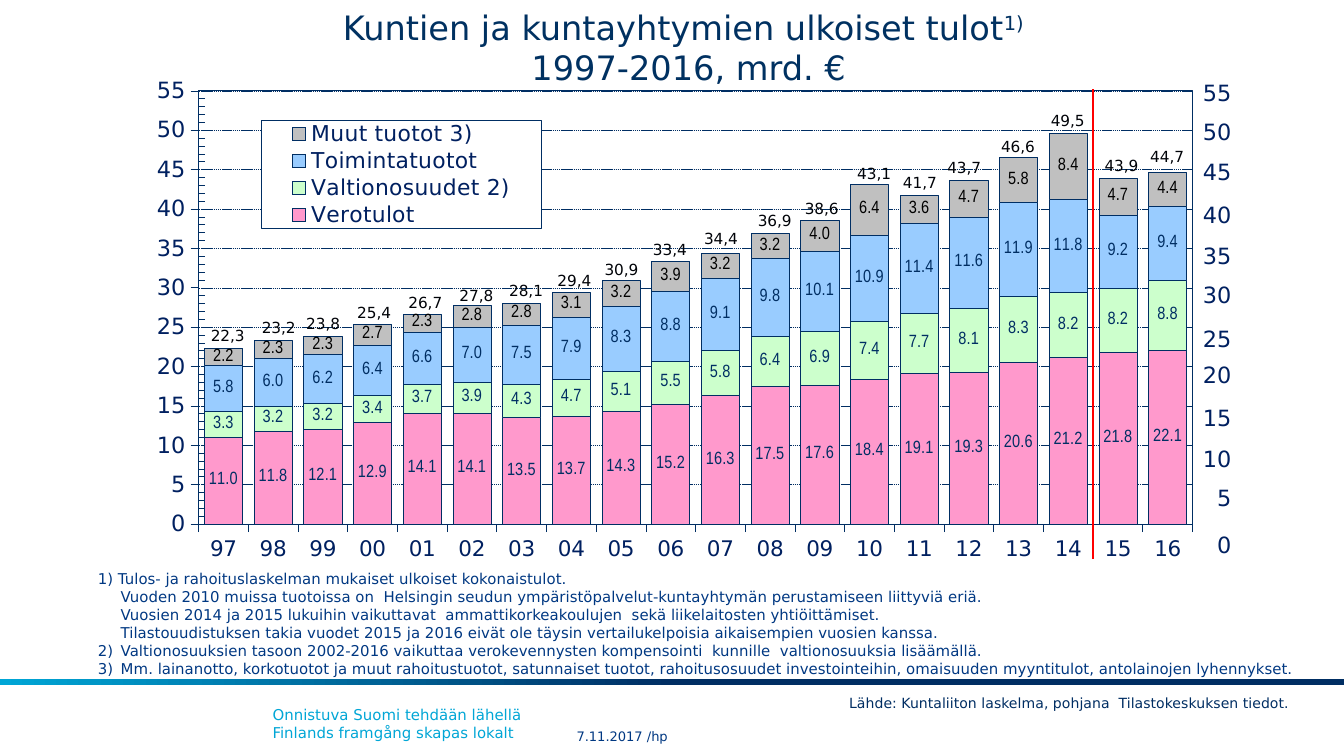
from lxml.etree import SubElement
from pptx import Presentation
from pptx.chart.data import CategoryChartData
from pptx.dml.color import RGBColor
from pptx.enum.chart import XL_CHART_TYPE, XL_LEGEND_POSITION, XL_TICK_MARK
from pptx.enum.dml import MSO_LINE
from pptx.enum.shapes import MSO_CONNECTOR, MSO_SHAPE
from pptx.enum.text import MSO_ANCHOR, PP_ALIGN
from pptx.oxml import parse_xml
from pptx.oxml.ns import nsdecls, qn
from pptx.util import Inches, Pt

SANS = "DejaVu Sans"
NAVY = "002E63"
AXIS = "002060"
NOTE = "003882"
CYAN = "00A6D6"

YEARS = ["97", "98", "99", "00", "01", "02", "03", "04", "05", "06",
         "07", "08", "09", "10", "11", "12", "13", "14", "15", "16"]
REVENUES = [
    ("Verotulot", "FF99CC", NAVY,
     [11, 11.8, 12.1, 12.9, 14.1, 14.1, 13.5, 13.7, 14.3, 15.2,
      16.3, 17.5, 17.6, 18.4, 19.1, 19.3, 20.6, 21.2, 21.8, 22.1]),
    ("Valtionosuudet 2)", "CCFFCC", NAVY,
     [3.3, 3.2, 3.2, 3.4, 3.7, 3.9, 4.3, 4.7, 5.1, 5.5,
      5.8, 6.4, 6.9, 7.4, 7.7, 8.1, 8.3, 8.2, 8.2, 8.8]),
    ("Toimintatuotot", "99CCFF", NAVY,
     [5.8, 6, 6.2, 6.4, 6.6, 7, 7.5, 7.9, 8.3, 8.8,
      9.1, 9.8, 10.1, 10.9, 11.4, 11.6, 11.9, 11.8, 9.2, 9.4]),
    ("Muut tuotot 3)", "C0C0C0", "000000",
     [2.2, 2.3, 2.3, 2.7, 2.3, 2.8, 2.8, 3.1, 3.2, 3.9,
      3.2, 3.2, 4, 6.4, 3.6, 4.7, 5.8, 8.4, 4.7, 4.4]),
]
TOTALS = [
    ("22,3", 0.49, 1.83), ("23,2", 0.87, 1.77), ("23,8", 1.2, 1.74), ("25,4", 1.58, 1.66),
    ("26,7", 1.96, 1.58), ("27,8", 2.34, 1.53), ("28,1", 2.71, 1.49), ("29,4", 3.07, 1.42),
    ("30,9", 3.42, 1.34), ("33,4", 3.78, 1.19), ("34,4", 4.16, 1.11), ("36,9", 4.56, 0.97),
    ("38,6", 4.91, 0.88), ("43,1", 5.3, 0.62), ("41,7", 5.64, 0.69), ("43,7", 5.97, 0.58),
    ("46,6", 6.37, 0.42), ("49,5", 6.74, 0.23), ("43,9", 7.14, 0.56), ("44,7", 7.48, 0.5),
]
RIGHT_SCALE_TOPS = [3.35, 3, 2.71, 2.41, 2.09, 1.82, 1.49, 1.2, 0.9, 0.58, 0.28, -0.01]
FOOTNOTES = [
    ("1) Tulos- ja rahoituslaskelman mukaiset ulkoiset kokonaistulot.", True),
    ("Vuoden 2010 muissa tuotoissa on  Helsingin seudun ympäristöpalvelut-kuntayhtymän "
     "perustamiseen liittyviä eriä.", False),
    ("Vuosien 2014 ja 2015 lukuihin vaikuttavat  ammattikorkeakoulujen  sekä "
     "liikelaitosten yhtiöittämiset.", False),
    ("Tilastouudistuksen takia vuodet 2015 ja 2016 eivät ole täysin vertailukelpoisia "
     "aikaisempien vuosien kanssa.", False),
    ("2)\tValtionosuuksien tasoon 2002-2016 vaikuttaa verokevennysten kompensointi  kunnille  "
     "valtionosuuksia lisäämällä.", True),
    ("3)\tMm. lainanotto, korkotuotot ja muut rahoitustuotot, satunnaiset tuotot, "
     "rahoitusosuudet investointeihin, omaisuuden myyntitulot, antolainojen lyhennykset.", True),
]


def rgb(value):
    return RGBColor.from_string(value)


def style_font(font, size, color, name=SANS):
    font.size = Pt(size)
    font.name = name
    font.bold = False
    font.color.rgb = rgb(color)


def style_line(line, width):
    line.color.rgb = rgb(NAVY)
    line.width = Pt(width)


def add_frame(slide, left, top, width, height, wrap=True):
    frame = slide.shapes.add_textbox(
        Inches(left), Inches(top), Inches(width), Inches(height)).text_frame
    frame.word_wrap = wrap
    return frame


def add_label(slide, box, text, size, color, align=PP_ALIGN.LEFT, wrap=True):
    frame = add_frame(slide, *box, wrap=wrap)
    paragraph = frame.paragraphs[0]
    paragraph.text = text
    paragraph.alignment = align
    style_font(paragraph.font, size, color)
    return frame


def add_title(slide, left, top, width, height):
    frame = add_label(slide, (left, top, width, height),
                      "Kuntien ja kuntayhtymien ulkoiset tulot", 18, "003161", PP_ALIGN.CENTER)
    frame.vertical_anchor = MSO_ANCHOR.BOTTOM
    frame.margin_left = frame.margin_right = 0
    heading = frame.paragraphs[0]
    footnote_mark = heading.add_run()
    footnote_mark.text = "1)"
    footnote_mark._r.get_or_add_rPr().set("baseline", "30000")
    heading.add_line_break()
    heading.add_run().text = " 1997-2016, mrd. €"


def layout_xml(x, y, width, height, inner=False):
    target = '<c:layoutTarget val="inner"/>' if inner else ""
    return parse_xml(
        f'<c:layout {nsdecls("c")}><c:manualLayout>{target}'
        '<c:xMode val="edge"/><c:yMode val="edge"/>'
        f'<c:x val="{x}"/><c:y val="{y}"/><c:w val="{width}"/><c:h val="{height}"/>'
        '</c:manualLayout></c:layout>')


def outline_xml(fill):
    return parse_xml(
        f'<c:spPr {nsdecls("c", "a")}>{fill}<a:ln w="6350"><a:solidFill>'
        f'<a:srgbClr val="{NAVY}"/></a:solidFill></a:ln></c:spPr>')


def style_axes(chart):
    years, amounts = chart.category_axis, chart.value_axis
    for axis, size in ((years, 11.5), (amounts, 12)):
        style_font(axis.tick_labels.font, size, AXIS)
        style_line(axis.format.line, 0.3)
        axis.major_tick_mark = XL_TICK_MARK.OUTSIDE
    amounts.minimum_scale = 0
    amounts.maximum_scale = 55
    amounts.major_unit = 5
    amounts.minor_unit = 1
    amounts.minor_tick_mark = XL_TICK_MARK.INSIDE
    amounts.tick_labels.number_format = "0"
    amounts.tick_labels.number_format_is_linked = False
    grid = amounts.major_gridlines.format.line
    style_line(grid, 0.25)
    grid.dash_style = MSO_LINE.SQUARE_DOT


def style_legend(chart):
    chart.has_legend = True
    legend = chart.legend
    legend.position = XL_LEGEND_POSITION.RIGHT
    legend.include_in_layout = False
    style_font(legend.font, 11.7, AXIS)
    element = legend._element
    for old in element.findall(qn("c:layout")):
        element.remove(old)
    element.find(qn("c:legendPos")).addnext(layout_xml(0.12, 0.09, 0.26, 0.21))
    white = '<a:solidFill><a:srgbClr val="FFFFFF"/></a:solidFill>'
    element.find(qn("c:overlay")).addnext(outline_xml(white))


def add_revenue_chart(slide, left, top, width, height):
    data = CategoryChartData(number_format="0.0")
    data.categories = YEARS
    for name, _, _, values in REVENUES:
        data.add_series(name, values)
    chart = slide.shapes.add_chart(
        XL_CHART_TYPE.COLUMN_STACKED, Inches(left), Inches(top),
        Inches(width), Inches(height), data).chart
    chart.has_title = False
    style_font(chart.font, 12, NAVY)
    columns = chart.plots[0]
    columns.gap_width = 30
    columns.overlap = 100
    columns.vary_by_categories = False
    for series, (_, fill, label_color, _) in zip(columns.series, REVENUES):
        series.format.fill.solid()
        series.format.fill.fore_color.rgb = rgb(fill)
        style_line(series.format.line, 0.25)
        labels = series.data_labels
        labels.show_value = True
        labels.number_format = "0.0"
        labels.number_format_is_linked = False
        style_font(labels.font, 9.5, label_color, "Arial Narrow")
    style_axes(chart)
    style_legend(chart)
    plot_area = chart._chartSpace.chart.plotArea
    for old in plot_area.findall(qn("c:layout")):
        plot_area.remove(old)
    plot_area.insert(0, layout_xml(0.062, 0.033, 0.921, 0.842, inner=True))
    plot_area.append(outline_xml("<a:noFill/>"))

    for step, offset in enumerate(RIGHT_SCALE_TOPS):
        add_label(slide, (left + 7.86, top + offset, 0.42, 0.3), str(step * 5),
                  12, AXIS, PP_ALIGN.RIGHT, wrap=False)
    for total, x, y in TOTALS:
        add_label(slide, (left + x, top + y, 0.46, 0.24), total, 8.2, "000308", wrap=False)

    divider = slide.shapes.add_connector(
        MSO_CONNECTOR.STRAIGHT, Inches(left + 7.15), Inches(top + 3.61),
        Inches(left + 7.15), Inches(top + 0.11))
    divider.line.color.rgb = rgb("FF0000")
    divider.line.width = Pt(1)
    SubElement(divider._element.spPr, qn("a:effectLst"))


def add_footnotes(slide, left, top, width, height):
    frame = add_frame(slide, left, top, width, height)
    for index, (text, numbered) in enumerate(FOOTNOTES):
        note = frame.paragraphs[0] if index == 0 else frame.add_paragraph()
        note.text = text
        properties = note._p.get_or_add_pPr()
        properties.set("marL", str(Inches(0.21)))
        properties.set("indent", str(Inches(-0.17 if numbered else 0)))
        style_font(note.font, 8, NOTE)


def add_footer(slide, left, top, width):
    band = slide.shapes.add_shape(
        MSO_SHAPE.RECTANGLE, Inches(left), Inches(top), Inches(width), Inches(0.05))
    band.shadow.inherit = False
    band.line.fill.background()
    band.fill.gradient()
    band.fill.gradient_angle = 180
    for stop, position, color in zip(band.fill.gradient_stops, (0.5, 1), (NAVY, CYAN)):
        stop.position = position
        stop.color.rgb = rgb(color)
    add_label(slide, (left + 1.93, top + 0.15, 6.54, 0.37),
              "Onnistuva Suomi tehdään lähellä\vFinlands framgång skapas lokalt", 8, CYAN)
    date = add_label(slide, (left + 4.29, top + 0.35, 1.11, 0.16), "7.11.2017 /hp", 7, NOTE)
    date.vertical_anchor = MSO_ANCHOR.MIDDLE
    date.margin_left = date.margin_right = date.margin_top = date.margin_bottom = 0
    add_label(slide, (left + 6.22, top + 0.07, 3.5, 0.23),
              "Lähde: Kuntaliiton laskelma, pohjana  Tilastokeskuksen tiedot.", 7.5, NAVY)


def main():
    presentation = Presentation()
    presentation.slide_width = Inches(10)
    presentation.slide_height = Inches(10) * 9 // 16
    slide = presentation.slides.add_slide(presentation.slide_layouts[6])
    add_footer(slide, 0, 5.05, 10)
    add_title(slide, 1.75, 0.04, 6.67, 0.66)
    add_revenue_chart(slide, 0.98, 0.55, 8.03, 3.83)
    add_footnotes(slide, 0.59, 4.19, 9.25, 0.91)
    presentation.save("out.pptx")


if __name__ == "__main__":
    main()
